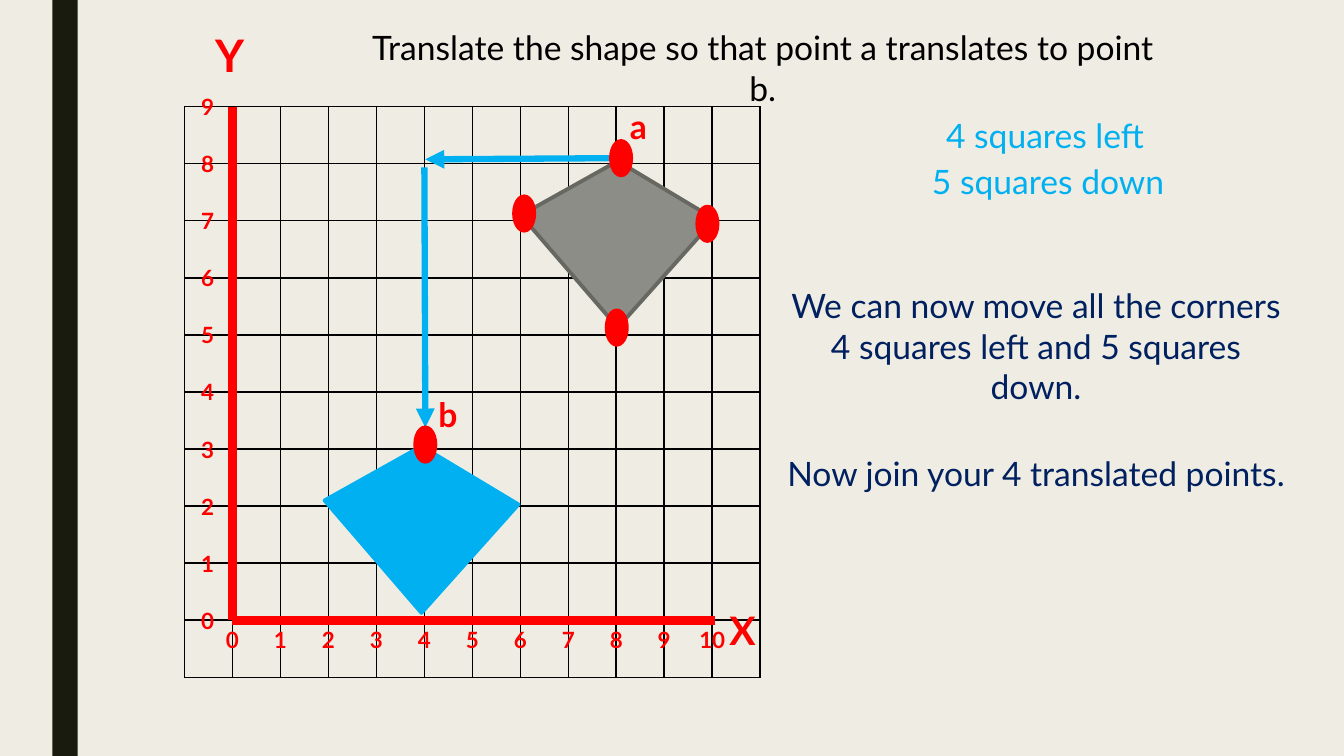
from lxml.etree import SubElement
from pptx import Presentation
from pptx.dml.color import RGBColor
from pptx.enum.shapes import MSO_CONNECTOR, MSO_SHAPE
from pptx.enum.text import MSO_ANCHOR, MSO_AUTO_SIZE, PP_ALIGN
from pptx.oxml.ns import qn
from pptx.util import Inches, Pt

COLORS = {
    "background": "EFEDE3",
    "sidebar": "191B0E",
    "black": "000000",
    "red": "FF0000",
    "blue": "00B0F0",
    "navy": "002060",
    "grey": "8C8D86",
    "grey_edge": "686863",
}
FONT = "Lato"

# Squared paper: the origin sits one column in and one row up
COLUMNS, ROWS = 12, 10
GRID_LEFT, GRID_TOP = Inches(1.83), Inches(1.06)
GRID_WIDTH, GRID_HEIGHT = Inches(5.71), Inches(5.66)
SQUARE_W, SQUARE_H = GRID_WIDTH / COLUMNS, GRID_HEIGHT / ROWS

# Kite corners in squares, counted from its top corner
KITE = [(0, 0), (2.02, -1.02), (0, -2.92), (-2.02, -0.95)]
DOTS = [(8.1, 8.1), (9.9, 6.95), (6.08, 7.13), (8.01, 5.13), (4.02, 3.08)]


def rgb(color):
    return RGBColor.from_string(COLORS[color])


def place(x, y):
    """Turn graph coordinates into a position on the slide."""
    return (round(GRID_LEFT + (x + 1) * SQUARE_W),
            round(GRID_TOP + (ROWS - 1 - y) * SQUARE_H))


def paint(shape, fill, edge=None):
    shape.shadow.inherit = False
    shape.fill.solid()
    shape.fill.fore_color.rgb = rgb(fill)
    if edge:
        shape.line.color.rgb = rgb(edge)
        shape.line.width = Pt(2.75)
    else:
        shape.line.fill.background()


def write(shape, words, size, color, bold=False):
    frame = shape.text_frame
    frame.word_wrap = True
    frame.auto_size = MSO_AUTO_SIZE.NONE
    frame.vertical_anchor = MSO_ANCHOR.TOP
    paragraph = frame.paragraphs[0]
    paragraph.text = words
    paragraph.alignment = PP_ALIGN.CENTER
    paragraph.font.name = FONT
    paragraph.font.size = Pt(size)
    paragraph.font.bold = bold
    paragraph.font.color.rgb = rgb(color)


def add_label(slide, words, x, y, size=16):
    """Red bold label centred on graph coordinates."""
    width, height = Inches(0.6), Pt(size * 1.2) + Inches(0.1)
    center_x, center_y = place(x, y)
    box = slide.shapes.add_textbox(center_x - width // 2, center_y - height // 2,
                                   width, height)
    write(box, words, size, "red", bold=True)


def add_squares(slide):
    frame = slide.shapes.add_table(ROWS, COLUMNS, GRID_LEFT, GRID_TOP,
                                   GRID_WIDTH, GRID_HEIGHT)
    table = frame.table
    table.first_row = table.horz_banding = False
    for column in table.columns:
        column.width = round(SQUARE_W)
    for row in table.rows:
        row.height = round(SQUARE_H)
    for cell in table.iter_cells():
        properties = cell._tc.get_or_add_tcPr()
        for side in ("a:lnL", "a:lnR", "a:lnT", "a:lnB"):
            border = SubElement(properties, qn(side), w=str(Pt(1)))
            fill = SubElement(border, qn("a:solidFill"))
            SubElement(fill, qn("a:srgbClr"), val=COLORS["black"])
        cell.fill.background()


def add_line(slide, start, end, color, width, arrow=False):
    line = slide.shapes.add_connector(MSO_CONNECTOR.STRAIGHT,
                                      *place(*start), *place(*end))
    line.line.color.rgb = rgb(color)
    line.line.width = Pt(width)
    if arrow:
        SubElement(line.line._get_or_add_ln(), qn("a:tailEnd"), type="triangle")
    SubElement(line._element.spPr, qn("a:effectLst"))


def add_kite(slide, top_x, top_y, fill, edge):
    corners = [place(top_x + dx, top_y + dy) for dx, dy in KITE]
    outline = slide.shapes.build_freeform(*corners[0])
    outline.add_line_segments(corners[1:], close=True)
    paint(outline.convert_to_shape(), fill, edge)


def add_dot(slide, x, y):
    width, height = Inches(0.2), Inches(0.34)
    center_x, center_y = place(x, y)
    dot = slide.shapes.add_shape(MSO_SHAPE.OVAL, center_x - width // 2,
                                 center_y - height // 2, width, height)
    paint(dot, "red", "red")


def add_message(slide, words, left, top, width, height, color):
    box = slide.shapes.add_textbox(Inches(left), Inches(top),
                                   Inches(width), Inches(height))
    write(box, words, 24, color)


def main():
    deck = Presentation()
    deck.slide_width, deck.slide_height = Inches(13.33), Inches(7.5)
    slide = deck.slides.add_slide(deck.slide_layouts[5])
    slide.background.fill.solid()
    slide.background.fill.fore_color.rgb = rgb("background")

    # Sidebar and title
    sidebar = slide.shapes.add_shape(MSO_SHAPE.RECTANGLE, Inches(0.52), 0,
                                     Inches(0.25), deck.slide_height)
    paint(sidebar, "sidebar")
    title = slide.shapes.title
    title.left, title.top = Inches(3.45), Inches(0.22)
    title.width, title.height = Inches(8.23), Inches(0.5)
    write(title, "Translate the shape so that point a translates to point b.",
          24, "black")

    # Squared paper, axes and their numbers
    add_squares(slide)
    add_line(slide, (10.05, 0), (0, 0), "red", 6)
    add_line(slide, (0, 9), (0, 0), "red", 6)
    for number in range(11):
        add_label(slide, str(number), number, -0.34)
    for number in range(10):
        add_label(slide, str(number), -0.52, number)
    add_label(slide, "X", 10.63, -0.16, size=28)
    add_label(slide, "Y", -0.06, 9.92, size=32)

    # Both kites, the two moves and the marked corners
    add_kite(slide, 3.94, 3.05, "blue", "blue")
    add_kite(slide, 8.03, 8.05, "grey", "grey_edge")
    add_line(slide, (7.89, 8.1), (4.02, 8.08), "blue", 4.5, arrow=True)
    add_line(slide, (4, 7.94), (4.02, 3.38), "blue", 4.5, arrow=True)
    for x, y in DOTS:
        add_dot(slide, x, y)
    add_label(slide, "a", 8.46, 8.66, size=24)
    add_label(slide, "b", 4.49, 3.61, size=24)

    # Explanation
    add_message(slide, "4 squares left", 8.7, 1.09, 3.33, 0.5, "blue")
    add_message(slide, "5 squares down", 8.73, 1.55, 3.33, 0.5, "blue")
    add_message(slide, "We can now move all the corners 4 squares left "
                "and 5 squares down.", 7.69, 2.78, 5.17, 0.91, "navy")
    add_message(slide, "Now join your 4 translated points.",
                7.69, 4.44, 5.17, 0.5, "navy")

    deck.save("out.pptx")


if __name__ == "__main__":
    main()
